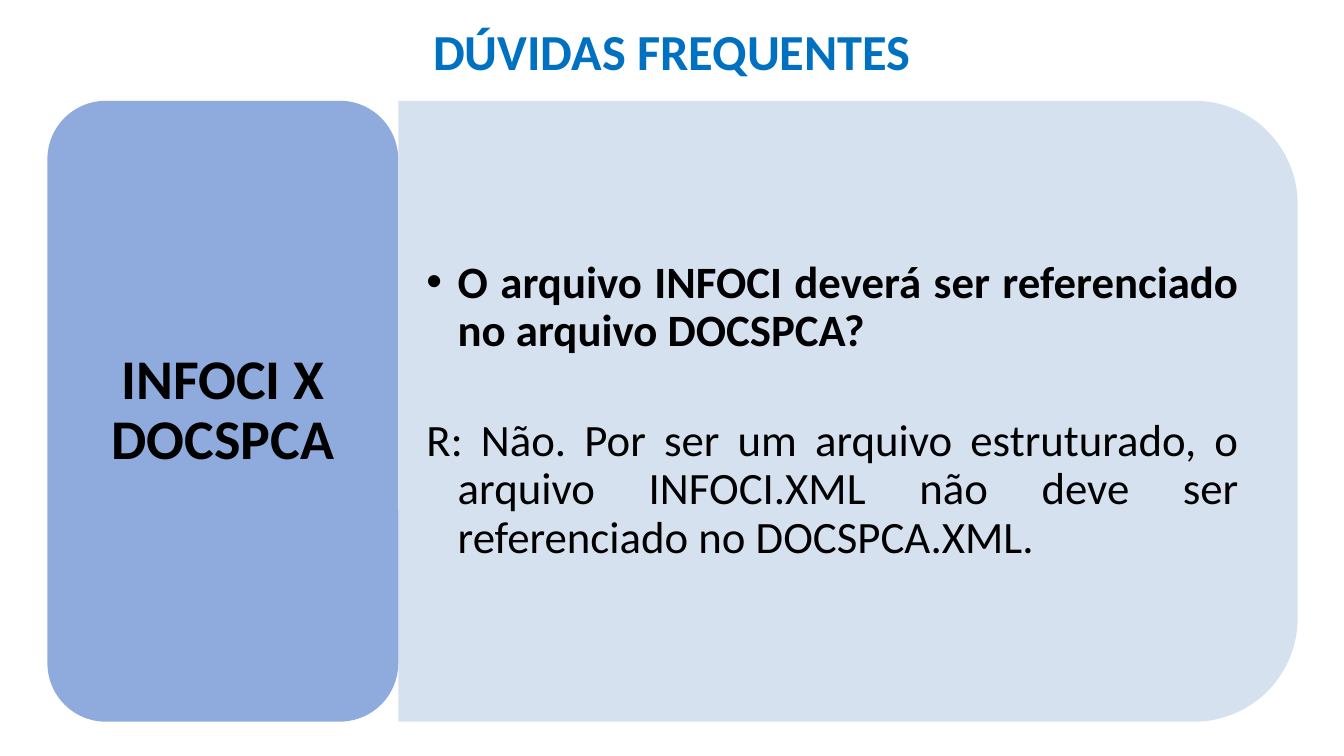
from dataclasses import dataclass

from lxml.etree import SubElement
from pptx import Presentation
from pptx.dml.color import RGBColor
from pptx.enum.shapes import MSO_SHAPE as Shape
from pptx.enum.text import MSO_ANCHOR as Anchor, PP_ALIGN as Align
from pptx.oxml.ns import qn
from pptx.util import Inches, Pt

# Content
TITLE = "DÚVIDAS FREQUENTES"
TOPIC = "INFOCI X DOCSPCA"
QUESTION = "O arquivo INFOCI deverá ser referenciado no arquivo DOCSPCA?"
ANSWER = ("R: Não. Por ser um arquivo estruturado, o arquivo INFOCI.XML "
          "não deve ser referenciado no DOCSPCA.XML.")


@dataclass(frozen=True)
class Theme:
    font: str = "Calibri"
    title: str = "0070C0"
    text: str = "000000"
    card: str = "8FAADC"
    panel: str = "D2DEEF"
    panel_opacity: int = 90
    title_size: int = 36
    topic_size: int = 40
    body_size: int = 32
    answer_gap: int = 44


THEME = Theme()

# Layout in inches: a topic card and an answer panel side by side
WIDTH, HEIGHT = 13.33, 7.5
LEFT, TOP, ROW_HEIGHT = 0.47, 1.0, 6.16
CARD_WIDTH, PANEL_WIDTH = 3.48, 8.92
PANEL_LEFT = LEFT + CARD_WIDTH
TEXT_INSET = 0.3
HANGING = 0.31
TITLE_BOX = (0.72, 0.15, 11.89, 0.71)
CARD_BOX = (LEFT, TOP, CARD_WIDTH, ROW_HEIGHT)
TEXT_BOX = (PANEL_LEFT, TOP + TEXT_INSET,
            PANEL_WIDTH - TEXT_INSET, ROW_HEIGHT - 2 * TEXT_INSET)
# The panel is turned a quarter, so its sides swap around the same centre
PANEL_BOX = (PANEL_LEFT + (PANEL_WIDTH - ROW_HEIGHT) / 2,
             TOP + (ROW_HEIGHT - PANEL_WIDTH) / 2, ROW_HEIGHT, PANEL_WIDTH)


def inches(box):
    return [Inches(length) for length in box]


def set_all(target, values):
    for name, value in values.items():
        setattr(target, name, value)


def prepare_frame(frame, anchor, side, end):
    set_all(frame, {"word_wrap": True, "vertical_anchor": anchor,
                    "margin_left": Inches(side), "margin_right": Inches(side),
                    "margin_top": Inches(end), "margin_bottom": Inches(end)})


def write(paragraph, text, size, color, bold, **formats):
    paragraph.text = text
    set_all(paragraph, formats)
    set_all(paragraph.font, {"name": THEME.font, "size": Pt(size), "bold": bold})
    paragraph.font.color.rgb = RGBColor.from_string(color)


def add_block(slide, kind, box, color):
    shape = slide.shapes.add_shape(kind, *inches(box))
    shape.shadow.inherit = False
    shape.fill.solid()
    shape.fill.fore_color.rgb = RGBColor.from_string(color)
    shape.line.fill.background()
    return shape


def hang(paragraph, bullet=None):
    properties = paragraph._p.get_or_add_pPr()
    properties.set("marL", str(Inches(HANGING)))
    properties.set("indent", str(-Inches(HANGING)))
    if bullet:
        SubElement(properties, qn("a:buFont"), typeface="Arial")
        SubElement(properties, qn("a:buChar"), char=bullet)
    else:
        SubElement(properties, qn("a:buNone"))


def main():
    presentation = Presentation()
    presentation.slide_width = Inches(WIDTH)
    presentation.slide_height = Inches(HEIGHT)
    slide = presentation.slides.add_slide(presentation.slide_layouts[5])

    # Title
    title = slide.shapes.title
    set_all(title, dict(zip(("left", "top", "width", "height"), inches(TITLE_BOX))))
    prepare_frame(title.text_frame, Anchor.TOP, 0.1, 0.05)
    write(title.text_frame.paragraphs[0], TITLE, THEME.title_size, THEME.title,
          True, alignment=Align.CENTER)

    # Answer panel
    panel = add_block(slide, Shape.ROUND_2_SAME_RECTANGLE, PANEL_BOX, THEME.panel)
    panel.rotation = 90
    color = panel.fill._xPr.find(qn("a:solidFill"))[0]
    SubElement(color, qn("a:alpha"), val=str(THEME.panel_opacity * 1000))

    # Question and answer
    frame = slide.shapes.add_textbox(*inches(TEXT_BOX)).text_frame
    prepare_frame(frame, Anchor.MIDDLE, 0.28, 0.14)
    entries = [(QUESTION, True, "•", THEME.answer_gap), (ANSWER, False, None, 0)]
    for index, (text, bold, bullet, gap) in enumerate(entries):
        paragraph = frame.add_paragraph() if index else frame.paragraphs[0]
        paragraph.line_spacing = 0.9
        paragraph.space_after = Pt(gap)
        hang(paragraph, bullet)
        write(paragraph, text, THEME.body_size, THEME.text, bold,
              alignment=Align.JUSTIFY)

    # Topic card
    card = add_block(slide, Shape.ROUNDED_RECTANGLE, CARD_BOX, THEME.card)
    prepare_frame(card.text_frame, Anchor.MIDDLE, 0.17, 0.08)
    write(card.text_frame.paragraphs[0], TOPIC, THEME.topic_size, THEME.text,
          True, alignment=Align.CENTER, line_spacing=0.9)

    presentation.save("out.pptx")


if __name__ == "__main__":
    main()
